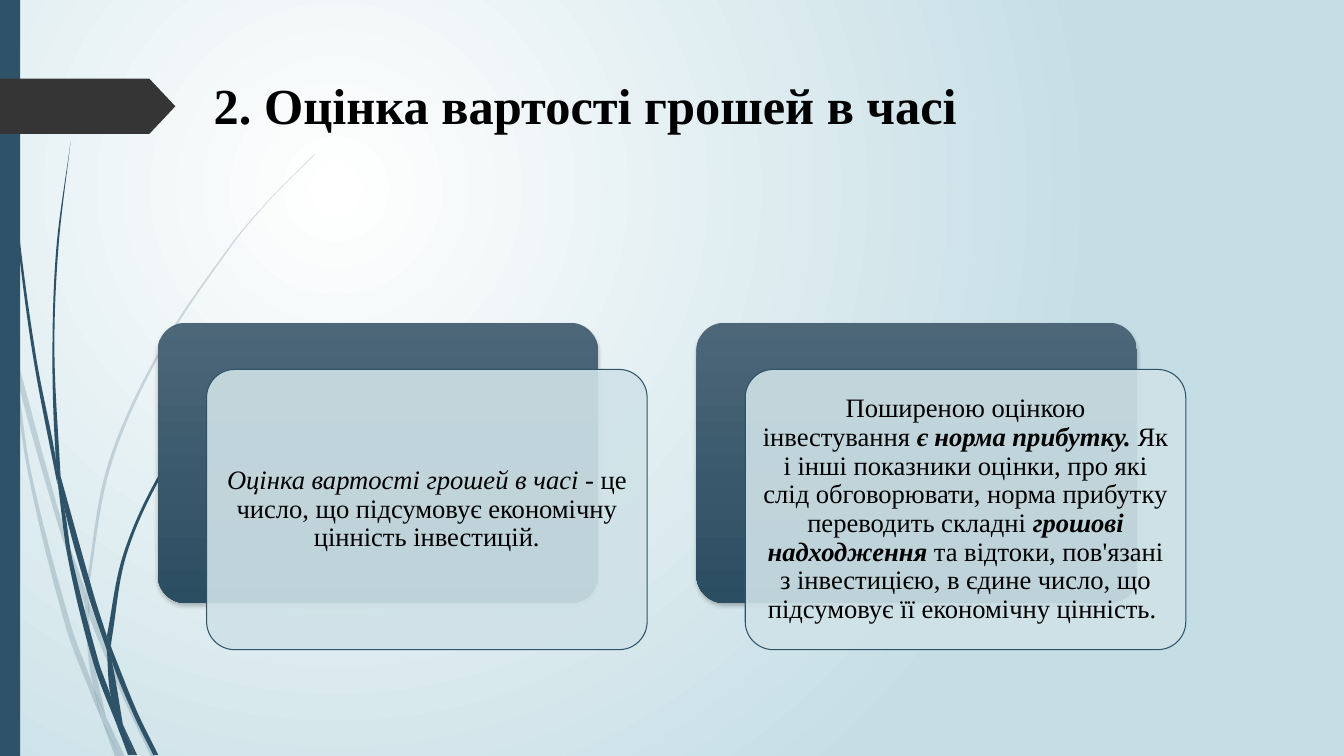
"""Build the slide on the time value of money."""
from dataclasses import dataclass
from math import dist

from lxml import etree
from pptx import Presentation
from pptx import util as u
from pptx.dml.color import RGBColor
from pptx.enum import shapes, text
from pptx.oxml.ns import qn

WIDTH, HEIGHT = u.Inches(13.33), u.Inches(7.5)


@dataclass(frozen=True)
class Theme:
    """Colours, font and type sizes of the slide."""
    font: str = "Times New Roman"
    title_size: int = 36
    body_size: int = 19
    ink: str = "000000"
    accent: str = "2E5369"
    tag: str = "353535"
    glass: str = "CFE2E7"
    backdrop: tuple = ("FFFFFF", "C5DEE5")
    panel: tuple = ("4D6779", "2B4D62")


THEME = Theme()
HARD_SPACE = "~"

CARDS = [
    [("Оцінка вартості грошей в часі", "i"),
     ("~- це число, що підсумовує економічну цінність інвестицій.", "")],
    [("Поширеною оцінкою інвестування~", ""),
     ("є норма прибутку.~", "bi"),
     ("Як і інші показники оцінки, про які слід обговорювати, "
      "норма прибутку переводить складні~", ""),
     ("грошові надходження", "bi"),
     ("~та відтоки, пов'язані з інвестицією, в єдине число, "
      "що підсумовує її економічну цінність. ", "")],
]

PALE_BLADES = [
    ([(0, 2.82), (.09, 3.22), (.11, 3.5)], [(0, 2.99), (.1, 3.44), (.11, 3.5)]),
    ([(.14, 3.45), (.17, 3.76), (.58, 5.22), (.84, 5.99)], [(.14, 3.45), (.62, 5.2), (.85, 5.86)]),
    ([(.88, 5.96), (.88, 6.1), (1.23, 6.94), (1.5, 7.51)],
     [(.88, 5.96), (.92, 6.07), (1.27, 6.92), (1.55, 7.51)]),
    ([(1.05, 7.11), (1.19, 7.51)], [(1.05, 7.11), (1.24, 7.51)]),
    ([(.11, 3.5), (.28, 4.7), (.65, 6.21), (.92, 6.93), (1.01, 7.14)],
     [(.11, 3.5), (.17, 3.76), (.31, 4.69), (.7, 6.19), (.93, 6.83), (1.01, 7.14)]),
    ([(.84, 5.99), (.87, 6.46), (.93, 6.83), (1.05, 7.11)],
     [(.84, 5.99), (.88, 6.1), (.91, 6.46), (1.05, 7.11)]),
    ([(3.12, 1.53), (2.68, 1.97), (2.28, 2.44), (1.58, 3.48), (1.07, 4.61), (.85, 5.84)],
     [(3.12, 1.54), (2.68, 1.98), (2.29, 2.45), (1.6, 3.49), (1.1, 4.62), (.88, 5.84), (.88, 5.96)]),
    ([(1.01, 7.14), (1.14, 7.51)], [(1.01, 7.14), (1.19, 7.51)]),
    ([(.85, 5.86), (.84, 5.99), (.88, 6.08)], [(.85, 5.86), (.88, 5.96), (.88, 6.1)]),
    ([(.93, 6.83), (1.01, 7.14), (1.19, 7.51)], [(.93, 6.83), (1.05, 7.11), (1.19, 7.51)]),
]

DARK_BLADES = [
    ([(.03, 0), (.07, 1.1), (.17, 2.33), (.33, 3.55), (.57, 4.81)],
     [(.04, 0), (.08, 1.09), (.19, 2.32), (.36, 3.55), (.55, 4.53), (.57, 4.81)]),
    ([(.6, 4.72), (.64, 5.05), (.88, 5.92), (1.06, 6.45)], [(.6, 4.72), (.93, 5.9), (1.06, 6.31)]),
    ([(1.1, 6.41), (1.11, 6.56), (1.32, 7.08), (1.52, 7.49)],
     [(1.1, 6.41), (1.13, 6.49), (1.36, 7.06), (1.57, 7.49)]),
    ([(.57, 4.77), (.68, 5.57), (.93, 6.59), (1.17, 7.22)],
     [(.57, 4.77), (.64, 5.05), (.72, 5.56), (.98, 6.57), (1.1, 6.91), (1.17, 7.22)]),
    ([(.7, 1.41), (.56, 2.45), (.52, 3.49), (.55, 4.49), (.6, 4.72)],
     [(.7, 1.41), (.58, 2.45), (.54, 3.49), (.6, 4.72)]),
    ([(1.22, 7.19), (1.33, 7.49)], [(1.22, 7.19), (1.36, 7.49)]),
    ([(.55, 4.49), (.57, 4.77), (.64, 5.05)], [(.55, 4.49), (.6, 4.72), (.64, 5.05)]),
    ([(2.6, 3.44), (2.04, 4.05), (1.56, 4.74), (1.22, 5.51), (1.06, 6.31)],
     [(2.61, 3.44), (2.05, 4.06), (1.58, 4.76), (1.25, 5.52), (1.11, 6.33), (1.1, 6.41)]),
    ([(1.17, 7.22), (1.27, 7.49)], [(1.17, 7.22), (1.31, 7.49)]),
    ([(1.06, 6.45), (1.1, 6.91), (1.22, 7.19)], [(1.06, 6.45), (1.11, 6.56), (1.22, 7.19)]),
    ([(1.06, 6.31), (1.06, 6.45), (1.11, 6.56)], [(1.06, 6.31), (1.1, 6.41), (1.11, 6.56)]),
    ([(1.1, 6.91), (1.17, 7.22), (1.3, 7.49)], [(1.1, 6.91), (1.22, 7.19), (1.33, 7.49)]),
]


def box(left, top, width, height):
    """Turn percentages of the slide into lengths."""
    return [round(share * side / 100)
            for share, side in zip((left, top, width, height), (WIDTH, HEIGHT) * 2)]


def paint(shape, colour, opacity=100):
    """Give a shape a plain fill, no line and no shadow."""
    shape.shadow.inherit = False
    shape.fill.solid()
    shape.fill.fore_color.rgb = RGBColor.from_string(colour)
    shape.line.fill.background()
    if opacity < 100:
        colour_element = shape.element.spPr.find(".//" + qn("a:srgbClr"))
        etree.SubElement(colour_element, qn("a:alpha"), val=str(opacity * 1000))


def blend(fill, colours):
    """Make a fill a two-stop gradient."""
    fill.gradient()
    for stop, position, colour in zip(fill.gradient_stops, (0, 1), colours):
        stop.position = position
        stop.color.rgb = RGBColor.from_string(colour)


def add_backdrop(slide):
    """Fill the background with a circular glow."""
    blend(slide.background.fill, THEME.backdrop)
    gradient = slide.element.find(".//" + qn("a:gradFill"))
    gradient.remove(gradient.find(qn("a:lin")))
    glow = etree.SubElement(gradient, qn("a:path"), path="circle")
    etree.SubElement(glow, qn("a:fillToRect"), l="50000", t="50000", r="100000", b="100000")


def bezier(knots):
    """Return knots with the control points of a smooth curve between them."""
    padded = [knots[0], *knots, knots[-1]]
    points = [knots[0]]
    for p, q, r, s in zip(padded, padded[1:], padded[2:], padded[3:]):
        reach = dist(q, r) / 3
        points.append(tuple(b + (c - a) * reach / dist(p, r) for a, b, c in zip(p, q, r)))
        points.append(tuple(c - (d - b) * reach / dist(q, s) for b, c, d in zip(q, r, s)))
        points.append(r)
    return points


def add_blades(slide, blades, opacity=100):
    """Add a group of curved grass blades, each between two edges."""
    group = slide.shapes.add_group_shape()
    for left_edge, right_edge in blades:
        down, back = bezier(left_edge), bezier(right_edge[::-1])
        outline = [tuple(u.Inches(value) for value in point)
                   for point in down + [down[-1], back[0]] + back]
        builder = group.shapes.build_freeform(*outline[0])
        builder.add_line_segments(outline[1:], close=True)
        blade = builder.convert_to_shape()
        lines = list(blade.element.iter(qn("a:lnTo")))
        for trio in zip(lines[::3], lines[1::3], lines[2::3]):
            curve = etree.Element(qn("a:cubicBezTo"))
            trio[0].addprevious(curve)
            for line in trio:
                curve.append(line[0])
                line.getparent().remove(line)
        paint(blade, THEME.accent, opacity)


def add_block(slide, kind, place, colour, opacity=100):
    """Add a preset shape with a plain fill."""
    shape = slide.shapes.add_shape(kind, *box(*place))
    paint(shape, colour, opacity)
    return shape


def add_run(paragraph, words, size, style=""):
    """Add a run; the style holds b for bold and i for italic."""
    run = paragraph.add_run()
    run.text = words.replace(HARD_SPACE, chr(160))
    run.font.name = THEME.font
    run.font.size = u.Pt(size)
    run.font.color.rgb = RGBColor.from_string(THEME.ink)
    run.font.bold, run.font.italic = "b" in style, "i" in style


def set_frame(frame, anchor, alignment, spacing):
    """Format a text frame and return its first paragraph."""
    frame.word_wrap, frame.vertical_anchor = True, anchor
    paragraph = frame.paragraphs[0]
    paragraph.alignment, paragraph.line_spacing = alignment, spacing
    return paragraph


def add_title(slide, words):
    """Place and fill the title placeholder."""
    title = slide.shapes.title
    title.left, title.top, title.width, title.height = box(15.15, 9.07, 76.97, 18.67)
    paragraph = set_frame(title.text_frame, text.MSO_ANCHOR.TOP, text.PP_ALIGN.LEFT, 1.0)
    add_run(paragraph, words, THEME.title_size, "b")


def add_card(slide, left, top, runs):
    """Add a dark panel with a glass text card in front of it."""
    rounded = shapes.MSO_SHAPE.ROUNDED_RECTANGLE
    size = (32.78, 37.07)
    panel = add_block(slide, rounded, (left, top, *size), THEME.panel[0])
    blend(panel.fill, THEME.panel)
    panel.fill.gradient_angle = 270
    effects = panel.element.spPr.find(qn("a:effectLst"))
    shadow = etree.SubElement(effects, qn("a:outerShdw"), blurRad=str(u.Pt(3)),
                              dist=str(u.Pt(2)), dir="5400000", rotWithShape="0")
    shade = etree.SubElement(shadow, qn("a:srgbClr"), val=THEME.ink)
    etree.SubElement(shade, qn("a:alpha"), val="25000")

    card = add_block(slide, rounded, (left + 3.64, top + 6.17, *size), THEME.glass, 90)
    card.line.color.rgb = RGBColor.from_string(THEME.accent)
    card.line.width = u.Pt(0.75)
    panel.adjustments[0] = card.adjustments[0] = 0.1
    frame = card.text_frame
    frame.margin_left = frame.margin_right = u.Inches(0.08)
    frame.margin_top = frame.margin_bottom = u.Inches(0.08)
    paragraph = set_frame(frame, text.MSO_ANCHOR.MIDDLE, text.PP_ALIGN.CENTER, 0.9)
    for words, style in runs:
        add_run(paragraph, words, THEME.body_size, style)


def main():
    """Build and save the presentation."""
    presentation = Presentation()
    presentation.slide_width, presentation.slide_height = WIDTH, HEIGHT
    slide = presentation.slides.add_slide(presentation.slide_layouts[5])
    add_backdrop(slide)
    add_blades(slide, PALE_BLADES, 20)
    add_blades(slide, DARK_BLADES)
    add_block(slide, shapes.MSO_SHAPE.RECTANGLE, (0, 0, 1.5, 100), THEME.accent)
    tag = add_block(slide, shapes.MSO_SHAPE.PENTAGON, (0, 10.4, 13.05, 7.33), THEME.tag)
    tag.adjustments[0] = 0.47
    add_title(slide, "2. Оцінка вартості грошей в часі")
    for column, runs in enumerate(CARDS):
        add_card(slide, 11.73 + 40.08 * column, 42.7, runs)
    presentation.save("out.pptx")


if __name__ == "__main__":
    main()
